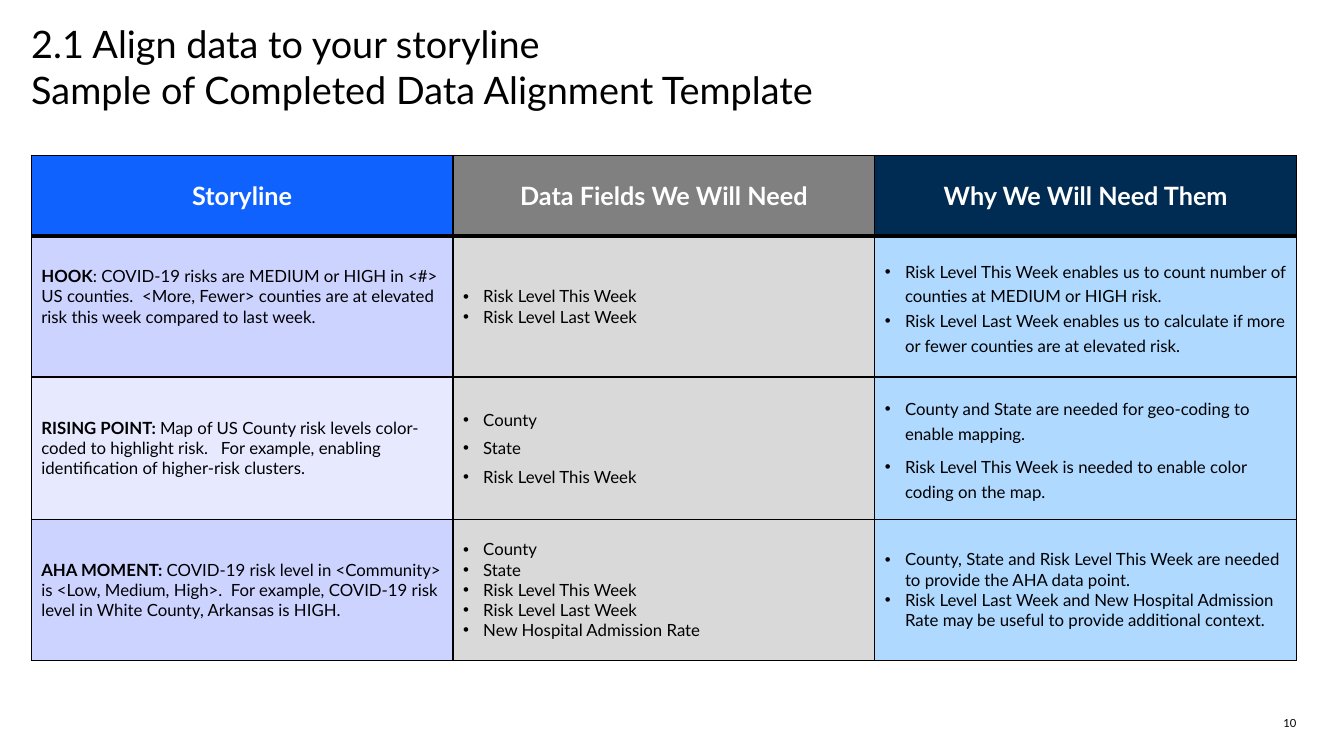
from dataclasses import dataclass

from lxml.etree import SubElement
from pptx import Presentation
from pptx.dml.color import RGBColor
from pptx.enum.text import MSO_ANCHOR, MSO_AUTO_SIZE, PP_ALIGN
from pptx.oxml.ns import qn
from pptx.util import Inches, Pt

# Content
TITLE = "2.1 Align data to your storyline\vSample of Completed Data Alignment Template"
PAGE_NUMBER = "10"
HEADERS = ["Storyline", "Data Fields We Will Need", "Why We Will Need Them"]
STORY_ROWS = [
    {
        "lead": "HOOK",
        "story": ": COVID-19 risks are MEDIUM or HIGH in <#> US counties.  <More, Fewer> "
                 "counties are at elevated risk this week compared to last week.",
        "fields": ["Risk Level This Week", "Risk Level Last Week"],
        "reasons": [
            "Risk Level This Week enables us to count number of counties at MEDIUM or HIGH risk.",
            "Risk Level Last Week enables us to calculate if more or fewer counties are at "
            "elevated risk.",
        ],
        "height": 1.4, "gap": 0, "reason_spacing": 1.23, "story_bottom": 0.25,
    },
    {
        "lead": "RISING POINT: ",
        "story": "Map of US County risk levels color-coded to highlight risk.   For example, "
                 "enabling identification of higher-risk clusters.",
        "fields": ["County", "State", "Risk Level This Week"],
        "reasons": [
            "County and State are needed for geo-coding to enable mapping.",
            "Risk Level This Week is needed to enable color coding on the map.",
        ],
        "height": 1.41, "gap": 6, "reason_spacing": 1.23, "story_bottom": 0.05,
    },
    {
        "lead": "AHA MOMENT: ",
        "story": "COVID-19 risk level in <Community> is <Low, Medium, High>.  For example, "
                 "COVID-19 risk level in White County, Arkansas is HIGH.",
        "fields": ["County", "State", "Risk Level This Week", "Risk Level Last Week",
                   "New Hospital Admission Rate"],
        "reasons": [
            "County, State and Risk Level This Week are needed to provide the AHA data point.",
            "Risk Level Last Week and New Hospital Admission Rate may be useful to provide "
            "additional context.",
        ],
        "height": 1.4, "gap": 0, "reason_spacing": 1, "story_bottom": 0.05,
    },
]


@dataclass(frozen=True)
class Theme:
    font: str = "Lato"
    ink: str = "000000"
    header_ink: str = "FFFFFF"
    headers: tuple = ("0F62FE", "808080", "002B52")
    story_bands: tuple = ("CCD3FF", "E7EAFF")
    fields: str = "D9D9D9"
    reasons: str = "AFD9FF"
    title_size: int = 27
    header_size: int = 18
    body_size: int = 12
    number_size: int = 8
    rule: int = 1
    header_rule: int = 3


THEME = Theme()
LEFT, TABLE_TOP, TABLE_WIDTH, HEADER_HEIGHT = 0.31, 1.54, 12.55, 0.8
BULLET_INDENT = 0.2


def write(frame, lines, *, size=THEME.body_size, color=THEME.ink, align=PP_ALIGN.LEFT,
          bold=False, lead="", bullet=False, spacing=1, after=0):
    """Fill a text frame with one paragraph per line; lead is a bold opening."""
    for index, line in enumerate(lines):
        paragraph = frame.paragraphs[0] if index == 0 else frame.add_paragraph()
        if bullet:
            properties = paragraph._p.get_or_add_pPr()
            properties.set("marL", str(Inches(BULLET_INDENT)))
            properties.set("indent", str(-Inches(BULLET_INDENT)))
            SubElement(properties, qn("a:buFont"), typeface="Arial")
            SubElement(properties, qn("a:buChar"), char="•")
        paragraph.alignment = align
        paragraph.line_spacing = spacing
        paragraph.space_before = Pt(0)
        paragraph.space_after = Pt(after)
        if lead:
            paragraph.add_run().text = lead
        first, *breaks = line.split("\v")
        paragraph.add_run().text = first
        for part in breaks:
            paragraph.add_line_break()
            paragraph.add_run().text = part
        for position, run in enumerate(paragraph.runs):
            font = run.font
            font.name, font.size = THEME.font, Pt(size)
            font.bold = bold or bool(lead and position == 0)
            font.color.rgb = RGBColor.from_string(color)


def clear_margins(frame):
    frame.margin_left = frame.margin_right = frame.margin_top = frame.margin_bottom = 0


def style_cell(cell, fill, top_rule=THEME.rule, bottom_rule=THEME.rule, bottom_margin=0.05):
    properties = cell._tc.get_or_add_tcPr()
    rules = {"lnL": THEME.rule, "lnR": THEME.rule, "lnT": top_rule, "lnB": bottom_rule}
    for side, width in rules.items():
        line = SubElement(properties, qn(f"a:{side}"), w=str(Pt(width)))
        solid = SubElement(line, qn("a:solidFill"))
        SubElement(solid, qn("a:srgbClr"), val=THEME.ink)
    cell.fill.solid()
    cell.fill.fore_color.rgb = RGBColor.from_string(fill)
    cell.vertical_anchor = MSO_ANCHOR.MIDDLE
    cell.margin_left = cell.margin_right = Inches(0.1)
    cell.margin_top, cell.margin_bottom = Inches(0.05), Inches(bottom_margin)


def add_title(slide):
    title = slide.shapes.title
    title.left, title.top = Inches(LEFT), Inches(0.21)
    title.width, title.height = Inches(12.09), Inches(0.83)
    frame = title.text_frame
    clear_margins(frame)
    frame.word_wrap = True
    frame.auto_size = MSO_AUTO_SIZE.NONE
    frame.vertical_anchor = MSO_ANCHOR.TOP
    write(frame, [TITLE], size=THEME.title_size)


def add_alignment_table(slide):
    heights = [HEADER_HEIGHT] + [row["height"] for row in STORY_ROWS]
    table = slide.shapes.add_table(
        len(heights), len(HEADERS), Inches(LEFT), Inches(TABLE_TOP),
        Inches(TABLE_WIDTH), Inches(sum(heights))).table
    for column in table.columns:
        column.width = Inches(TABLE_WIDTH / len(HEADERS))
    for row, height in zip(table.rows, heights):
        row.height = Inches(height)

    # Header row
    for column, (header, fill) in enumerate(zip(HEADERS, THEME.headers)):
        cell = table.cell(0, column)
        style_cell(cell, fill, bottom_rule=THEME.header_rule)
        write(cell.text_frame, [header], size=THEME.header_size, color=THEME.header_ink,
              align=PP_ALIGN.CENTER, bold=True)

    # Story rows
    for index, content in enumerate(STORY_ROWS):
        story, fields, reasons = (table.cell(index + 1, column) for column in range(3))
        top_rule = THEME.rule if index else THEME.header_rule
        band = THEME.story_bands[index % len(THEME.story_bands)]
        style_cell(story, band, top_rule, bottom_margin=content["story_bottom"])
        style_cell(fields, THEME.fields, top_rule)
        style_cell(reasons, THEME.reasons, top_rule)
        write(story.text_frame, [content["story"]], lead=content["lead"])
        write(fields.text_frame, content["fields"], bullet=True, after=content["gap"])
        write(reasons.text_frame, content["reasons"], bullet=True, after=content["gap"],
              spacing=content["reason_spacing"])


def add_page_number(slide):
    box = slide.shapes.add_textbox(Inches(12.73), Inches(7.11), Inches(0.13), Inches(0.13))
    frame = box.text_frame
    clear_margins(frame)
    frame.word_wrap = False
    frame.vertical_anchor = MSO_ANCHOR.MIDDLE
    write(frame, [PAGE_NUMBER], size=THEME.number_size)


def main():
    deck = Presentation()
    deck.slide_width, deck.slide_height = Inches(13.33), Inches(7.5)
    slide = deck.slides.add_slide(deck.slide_layouts[5])
    add_title(slide)
    add_alignment_table(slide)
    add_page_number(slide)
    deck.save("out.pptx")


if __name__ == "__main__":
    main()
